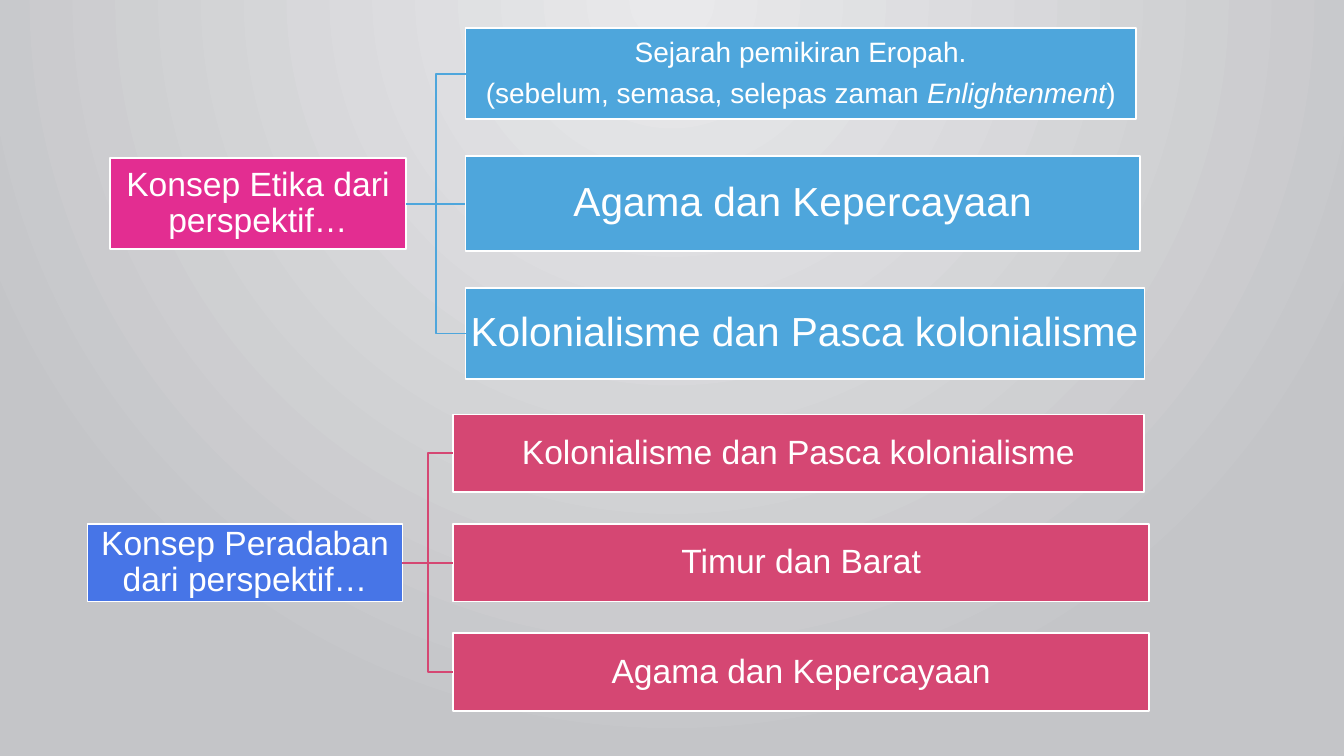
"""Build a slide with two concept trees, each branching into three perspectives."""
import pptx
import pptx.dml.color
import pptx.enum.shapes
import pptx.enum.text
import pptx.oxml
import pptx.oxml.ns
import pptx.util

Pt = pptx.util.Pt
qn = pptx.oxml.ns.qn
LINE_WIDTH = 1.25
WHITE = "FFFFFF"


def colour(hex_string):
    """Turn a hex string into a colour."""
    return pptx.dml.color.RGBColor.from_string(hex_string)


def paint_background(slide, inner, outer):
    """Fill the background with a circular gradient centred on the top edge."""
    fill = slide.background.fill
    fill.gradient()
    for stop, stop_colour, position in zip(fill.gradient_stops, (inner, outer), (0, 1)):
        stop.color.rgb = colour(stop_colour)
        stop.position = position
    gradient = slide.element.find(".//" + qn("a:gradFill"))
    gradient.remove(gradient.find(qn("a:lin")))
    gradient.append(pptx.oxml.parse_xml(
        f'<a:path {pptx.oxml.ns.nsdecls("a")} path="circle">'
        '<a:fillToRect l="43000" t="0" r="43000" b="100000"/></a:path>'))


def add_box(slide, left, middle, width, height, fill, size, paragraphs):
    """Add a rectangle centred on a height, its text given as runs of (text, italic)."""
    shape = slide.shapes.add_shape(
        pptx.enum.shapes.MSO_SHAPE.RECTANGLE,
        Pt(left), Pt(middle - height / 2), Pt(width), Pt(height))
    shape.shadow.inherit = False
    shape.fill.solid()
    shape.fill.fore_color.rgb = colour(fill)
    shape.line.color.rgb = colour(WHITE)
    shape.line.width = Pt(LINE_WIDTH)
    frame = shape.text_frame
    frame.word_wrap = True
    frame.vertical_anchor = pptx.enum.text.MSO_ANCHOR.MIDDLE
    frame.margin_left = frame.margin_right = Pt(1.2)
    frame.margin_top = frame.margin_bottom = Pt(1.2)
    for index, runs in enumerate(paragraphs):
        paragraph = frame.add_paragraph() if index else frame.paragraphs[0]
        paragraph.alignment = pptx.enum.text.PP_ALIGN.CENTER
        paragraph.line_spacing = 0.9
        paragraph.space_after = Pt(size * 0.4)
        paragraph.font.name = "Arial"
        paragraph.font.size = Pt(size)
        paragraph.font.color.rgb = colour(WHITE)
        for text, italic in runs:
            run = paragraph.add_run()
            run.text = text
            if italic:
                run.font.italic = True
    return shape


def join(slide, parent, child, kind, line_colour):
    """Join the right side of a parent box to the left side of a child box."""
    connector = slide.shapes.add_connector(kind, 0, 0, 0, 0)
    connector.begin_connect(parent, 3)
    connector.end_connect(child, 1)
    connector.line.color.rgb = colour(line_colour)
    connector.line.width = Pt(LINE_WIDTH)
    properties = connector.element.find(qn("p:spPr"))
    properties.append(properties.makeelement(qn("a:effectLst"), {}))


def add_tree(slide, concept, middle, pitch, branch_left, branch_colour, branches):
    """Add a concept box with its perspectives evenly spaced around its middle."""
    left, width, height, fill, text = concept
    parent = add_box(slide, left, middle, width, height, fill, 24, [[(text, False)]])
    kinds = pptx.enum.shapes.MSO_CONNECTOR
    for step, (branch_width, branch_height, size, paragraphs) in zip((-1, 0, 1), branches):
        child = add_box(slide, branch_left, middle + step * pitch, branch_width,
                        branch_height, branch_colour, size, paragraphs)
        join(slide, parent, child, kinds.ELBOW if step else kinds.STRAIGHT, branch_colour)


def main():
    """Build and save the slide."""
    presentation = pptx.Presentation()
    presentation.slide_width = Pt(960)
    presentation.slide_height = Pt(540)
    slide = presentation.slides.add_slide(presentation.slide_layouts[6])
    paint_background(slide, "E9E9EB", "C4C5C8")

    history = [
        [("Sejarah pemikiran Eropah.", False)],
        [("(sebelum, semasa, selepas zaman ", False), ("Enlightenment", True), (")", False)],
    ]
    religion = [[("Agama dan Kepercayaan", False)]]
    colonialism = [[("Kolonialisme dan Pasca kolonialisme", False)]]
    east_and_west = [[("Timur dan Barat", False)]]

    add_tree(slide, (78.5, 211.5, 65, "E32D91", "Konsep Etika dari perspektif…"),
             145.5, 92.8, 332.5, "4EA6DC",
             [(479, 65, 20, history), (482, 68, 29, religion), (485, 65, 29, colonialism)])
    add_tree(slide, (62.5, 225, 55.5, "4775E7", "Konsep Peradaban dari perspektif…"),
             402, 78.2, 323.5, "D54773",
             [(493.5, 55.5, 24, colonialism), (497.5, 55.5, 24, east_and_west),
              (497.5, 55.5, 24, religion)])
    presentation.save("out.pptx")


if __name__ == "__main__":
    main()
